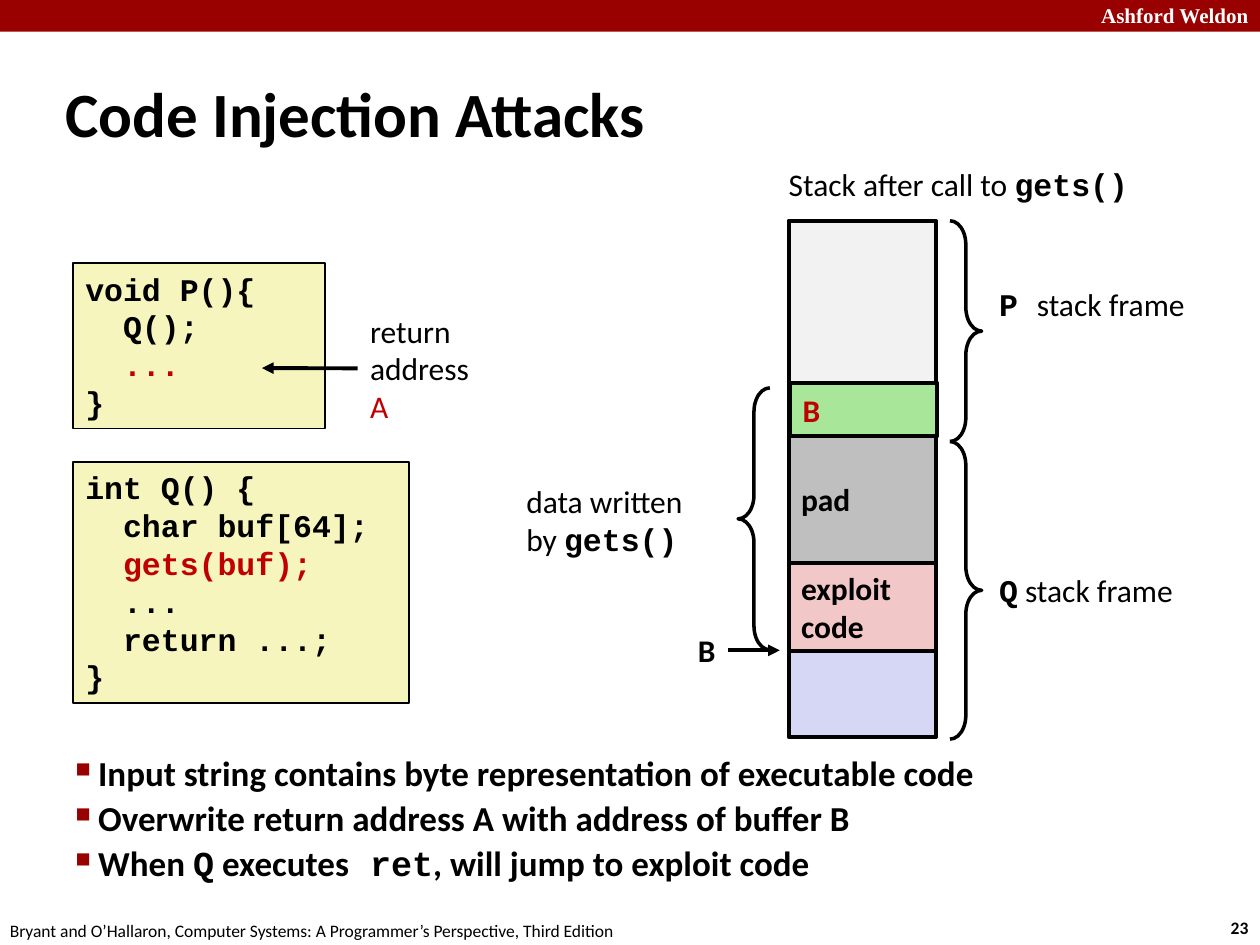
import dataclasses

import lxml.etree
import pptx
import pptx.dml.color
import pptx.enum.shapes
import pptx.enum.text
import pptx.oxml.ns
import pptx.util

Cm = pptx.util.Cm
Pt = pptx.util.Pt
SHAPES = pptx.enum.shapes.MSO_SHAPE
ANCHORS = pptx.enum.text.MSO_ANCHOR
BLACK, WHITE, RED, MAROON = "000000", "FFFFFF", "C00000", "990000"
CREAM, GREEN, PINK = "F6F5BD", "A8E799", "F1C7C7"
LIGHT_GRAY, GRAY, LAVENDER = "F2F2F2", "BFBFBF", "D6D6F5"


@dataclasses.dataclass
class Span:
    text: str
    bold: bool = False
    color: str = BLACK
    font: str = "Calibri"


def bold(text, color=BLACK):
    return Span(text, True, color)


def code(text, color=BLACK):
    return Span(text, True, color, "Courier New")


def rgb(value):
    return pptx.dml.color.RGBColor.from_string(value)


def add_xml(parent, tag, **attributes):
    return lxml.etree.SubElement(parent, pptx.oxml.ns.qn(tag), attributes)


def write(box, lines, size=18, anchor=ANCHORS.MIDDLE, wrap=True):
    frame = box.text_frame
    frame.word_wrap = wrap
    frame.vertical_anchor = anchor
    for number, spans in enumerate(lines):
        para = frame.add_paragraph() if number else frame.paragraphs[0]
        para.alignment = pptx.enum.text.PP_ALIGN.LEFT
        for item in spans:
            span = para.add_run()
            span.text = item.text
            span.font.name = item.font
            span.font.size = Pt(size)
            span.font.bold = item.bold
            span.font.color.rgb = rgb(item.color)
    return box


def add_text(page, left, top, width, height, lines, **style):
    box = page.shapes.add_textbox(Cm(left), Cm(top), Cm(width), Cm(height))
    return write(box, lines, **style)


def add_box(page, left, top, width, height, fill, line_width=None, kind=SHAPES.RECTANGLE):
    box = page.shapes.add_shape(kind, Cm(left), Cm(top), Cm(width), Cm(height))
    box.shadow.inherit = False
    if fill:
        box.fill.solid()
        box.fill.fore_color.rgb = rgb(fill)
    else:
        box.fill.background()
    if line_width:
        box.line.color.rgb = rgb(BLACK)
        box.line.width = Pt(line_width)
    else:
        box.line.fill.background()
    return box


def add_brace(page, left, top, height, rotation):
    brace = add_box(page, left, top, 0.64, height, None, 2, SHAPES.LEFT_BRACE)
    brace.adjustments[0] = 0.75
    brace.adjustments[1] = 0.5
    brace.rotation = rotation


def add_arrow(page, label, side, end_x, y):
    arrow = page.shapes.add_connector(
        pptx.enum.shapes.MSO_CONNECTOR.STRAIGHT, label.left, Cm(y), Cm(end_x), Cm(y))
    arrow.begin_connect(label, side)
    arrow.line.color.rgb = rgb(BLACK)
    arrow.line.width = Pt(2.25)
    add_xml(arrow.line._get_or_add_ln(), "a:tailEnd", type="triangle")
    add_xml(arrow._element.spPr, "a:effectLst")


def draw_frame(page, width, height):
    add_box(page, 0, 0, width, 0.64, MAROON)
    add_text(page, width - 3.45, -0.08, 3.63, 0.76,
             [[Span("Ashford Weldon", True, WHITE, "Times New Roman")]],
             size=12, anchor=ANCHORS.TOP)
    add_text(page, width - 0.84, height - 0.69, 0.94, 0.69, [[bold("23")]],
             size=10, anchor=ANCHORS.TOP, wrap=False)
    add_text(page, -0.05, height - 0.63, 12.9, 0.69,
             [[Span("Bryant and O’Hallaron, Computer Systems: "
                    "A Programmer’s Perspective, Third Edition")]],
             size=10, anchor=ANCHORS.TOP, wrap=False)


def draw_title(page, left, top, width, height):
    add_text(page, left, top, width, height, [[bold("Code Injection Attacks")]], size=36)


def draw_bullets(page, left, top, width, height):
    box = add_text(page, left, top, width, height, [
        [bold("Input string contains byte representation of executable code")],
        [bold("Overwrite return address A with address of buffer B")],
        [bold("When "), code("Q"), bold(" executes"), code(" ret"),
         bold(", will jump to exploit code")],
    ], size=20)
    for para in box.text_frame.paragraphs:
        para.line_spacing = 0.9
        para.space_before = Pt(4)
        properties = para._p.get_or_add_pPr()
        properties.set("marL", str(Cm(0.46)))
        properties.set("indent", str(Cm(-0.46)))
        add_xml(add_xml(properties, "a:buClr"), "a:srgbClr", val=MAROON)
        add_xml(properties, "a:buSzPct", val="60000")
        add_xml(properties, "a:buChar", char="■")


def draw_code(page, left, top):
    caller = add_box(page, left, top, 5.08, 3.33, CREAM, 1)
    write(caller, [
        [code("void P(){")],
        [code("  Q();")],
        [code("  "), code("...", RED)],
        [code("}")],
    ], anchor=ANCHORS.TOP)
    callee = add_box(page, left, top + 4.01, 6.78, 4.85, CREAM, 1)
    write(callee, [
        [code("int Q() {")],
        [code("  char buf[64];")],
        [code("  "), code("gets(buf);", RED)],
        [code("  ...")],
        [code("  return ...;")],
        [code("}")],
    ], anchor=ANCHORS.TOP)
    label = add_text(page, left + 5.74, top + 0.83, 2.54, 2.57, [
        [Span("return")], [Span("address")], [Span("A", color=RED)]], wrap=False)
    add_arrow(page, label, 3 - 2, left + 3.81, top + 2.11)


def draw_stack(page, left, top):
    segments = [
        (0, 0, 4.32, LIGHT_GRAY, []),
        (0, 4.31, 6.1, LAVENDER, []),
        (0, 6.88, 1.8, PINK, [[bold("exploit")], [bold("code")]]),
        (0, 4.31, 2.59, GRAY, [[bold("pad")]]),
        (0.03, 3.27, 1.07, GREEN, [[bold("B", RED)]]),
    ]
    for x, y, height, fill, lines in segments:
        write(add_box(page, left + x, top + y, 2.97, height, fill, 2.25), lines)

    for x, y, height, rotation in [
            (3.25, 0, 4.45, 180), (3.25, 4.45, 6, 180), (-1.02, 3.37, 5.28, 0)]:
        add_brace(page, left + x, top + y, height, rotation)

    labels = [
        (-0.25, -1.25, 7.44, [Span("Stack after call to "), code("gets()")]),
        (3.99, 1.16, 4.32, [code("P "), Span("stack frame")]),
        (3.99, 6.93, 4.09, [code("Q"), Span(" stack frame")]),
    ]
    for x, y, width, spans in labels:
        add_text(page, left + x, top + y, width, 1.02, [spans], wrap=False)
    add_text(page, left - 5.54, top + 5.13, 3.81, 1.8,
             [[Span("data written")], [Span("by "), code("gets()")]])
    buffer_label = add_text(page, left - 2.08, top + 8.15, 0.86, 1.02,
                            [[bold("B")]], wrap=False)
    add_arrow(page, buffer_label, 3, left - 0.18, top + 8.66)


def main():
    deck = pptx.Presentation()
    deck.slide_width, deck.slide_height = Cm(25.4), Cm(19.05)
    page = deck.slides.add_slide(deck.slide_layouts[6])
    draw_frame(page, 25.4, 19.05)
    draw_title(page, 1.07, 1.47, 23.06, 1.6)
    draw_bullets(page, 1.27, 14.94, 23.06, 3.18)
    draw_code(page, 1.47, 5.31)
    draw_stack(page, 15.9, 4.45)
    deck.save("out.pptx")


if __name__ == "__main__":
    main()
